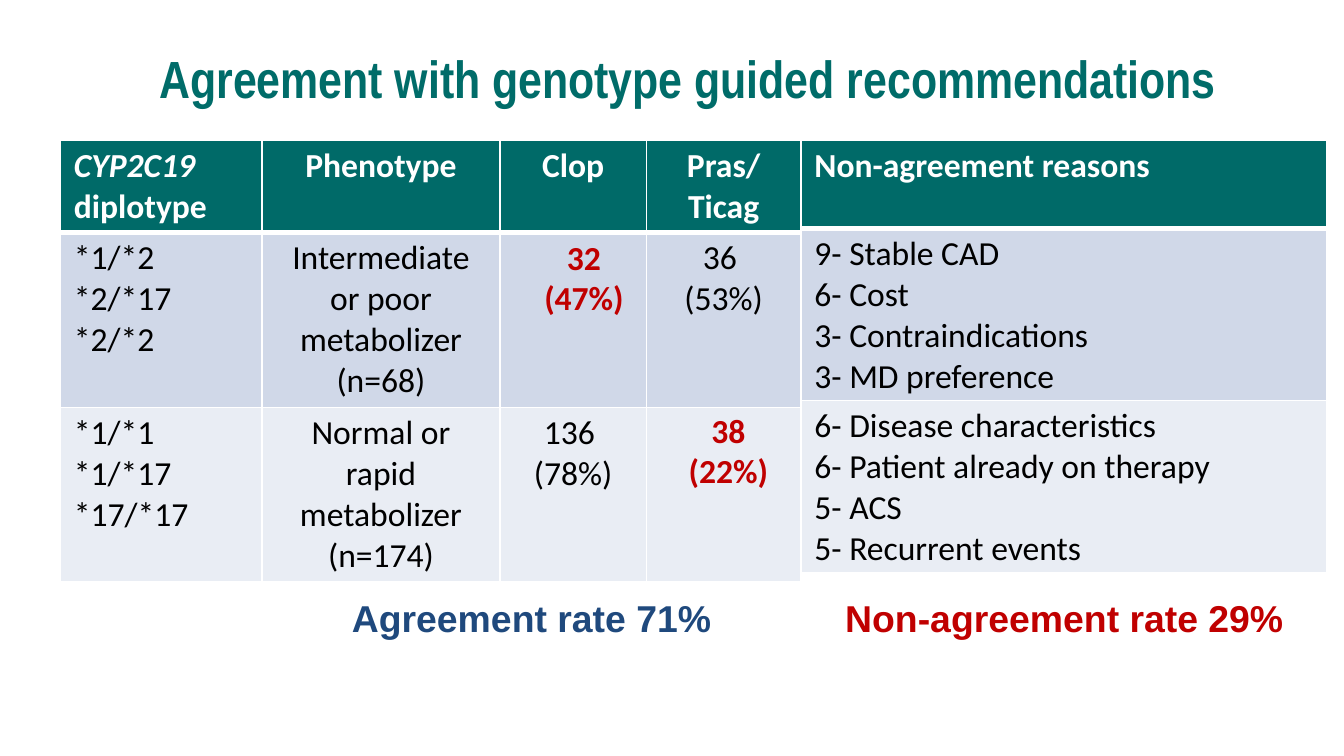
from dataclasses import dataclass

from lxml import etree
from pptx import Presentation
from pptx.dml.color import RGBColor
from pptx.enum import text
from pptx.oxml import ns
from pptx.util import Inches, Pt

COLORS = {
    "title": "006C69", "header": "006A68", "white": "FFFFFF", "black": "000000",
    "band_dark": "D0D8E8", "band_light": "E9EDF4", "blue": "1F497D", "red": "C00000",
}
BANDS = ("header", "band_dark", "band_light")
LEFT, CENTER = text.PP_ALIGN.LEFT, text.PP_ALIGN.CENTER


@dataclass
class Label:
    words: str
    left: float
    top: float
    width: float
    height: float
    color: str
    size: int = 20
    font: str = "Arial"
    align: text.PP_ALIGN = LEFT


@dataclass
class Grid:
    left: float
    columns: list[float]
    heights: list[float]
    aligns: list[text.PP_ALIGN]
    rows: list[list[str]]  # a line break in a cell starts a new paragraph


def add_run(paragraph, words: str, font: str, size: int, color: str,
            bold: bool = False, italic: bool = False) -> None:
    run = paragraph.add_run()
    run.text = words
    run.font.name, run.font.size = font, Pt(size)
    run.font.bold, run.font.italic = bold, italic
    run.font.color.rgb = RGBColor.from_string(COLORS[color])


def add_label(slide, label: Label) -> None:
    box = slide.shapes.add_textbox(Inches(label.left), Inches(label.top),
                                   Inches(label.width), Inches(label.height))
    box.text_frame.word_wrap = True
    box.text_frame.auto_size = text.MSO_AUTO_SIZE.SHAPE_TO_FIT_TEXT
    paragraph = box.text_frame.paragraphs[0]
    paragraph.alignment = label.align
    add_run(paragraph, label.words, label.font, label.size, label.color, bold=True)


def set_borders(cell, bottom_width: float) -> None:
    properties = cell._tc.get_or_add_tcPr()
    for side, width in (("L", 1), ("R", 1), ("T", 1), ("B", bottom_width)):
        line = etree.SubElement(properties, ns.qn(f"a:ln{side}"), w=str(Pt(width)))
        fill = etree.SubElement(line, ns.qn("a:solidFill"))
        etree.SubElement(fill, ns.qn("a:srgbClr"), val=COLORS["white"])


def fill_cell(cell, words: str, row: int, align: text.PP_ALIGN) -> None:
    is_header = row == 0
    set_borders(cell, 3 if is_header else 1)
    cell.fill.solid()
    cell.fill.fore_color.rgb = RGBColor.from_string(COLORS[BANDS[row]])
    cell.margin_left = cell.margin_right = Inches(0.1)
    cell.margin_top = cell.margin_bottom = Inches(0.04)
    for index, line in enumerate(words.split("\n") if words else []):
        frame = cell.text_frame
        paragraph = frame.paragraphs[0] if index == 0 else frame.add_paragraph()
        paragraph.alignment = align
        # The gene name is set in italics
        gene, found, rest = line.partition("CYP2C19 ")
        for part, italic in ((found, True), (rest if found else gene, False)):
            if part:
                add_run(paragraph, part, "Calibri", 18,
                        "white" if is_header else "black", is_header, italic)


def add_grid(slide, grid: Grid) -> None:
    table = slide.shapes.add_table(
        len(grid.rows), len(grid.columns), Inches(grid.left), Inches(1.04),
        Inches(sum(grid.columns)), Inches(sum(grid.heights))).table
    for column, width in zip(table.columns, grid.columns):
        column.width = Inches(width)
    for r, (height, row) in enumerate(zip(grid.heights, grid.rows)):
        table.rows[r].height = Inches(height)
        for c, (words, align) in enumerate(zip(row, grid.aligns)):
            fill_cell(table.cell(r, c), words, r, align)


GENOTYPES = Grid(
    0.45, [1.5, 1.77, 1.09, 1.15], [0.58, 1.08, 1.08], [LEFT, CENTER, CENTER, CENTER],
    [
        ["CYP2C19 diplotype", "Phenotype", "Clop", "Pras/ Ticag"],
        ["*1/*2\n*2/*17\n*2/*2", "Intermediate or poor metabolizer (n=68)",
         "", "36 \n(53%)"],
        ["*1/*1\n*1/*17\n*17/*17", "Normal or rapid metabolizer\n(n=174)",
         "136 \n(78%)", ""],
    ])
REASONS = Grid(
    5.96, [3.91], [0.66, 1.28, 1.28], [LEFT],
    [
        ["Non-agreement reasons"],
        ["9- Stable CAD\n6- Cost\n3- Contraindications\n3- MD preference"],
        ["6- Disease characteristics\n6- Patient already on therapy\n"
         "5- ACS\n5- Recurrent events"],
    ])
LABELS = [
    Label("Agreement rate 71%", 2.52, 4.38, 3.3, 0.44, "blue"),
    Label("32 (47%)", 3.95, 1.71, 0.79, 0.71, "red", 18, "Calibri", CENTER),
    Label("38 (22%)", 5.02, 3, 0.8, 0.71, "red", 18, "Calibri", CENTER),
    Label("Non-agreement rate 29%", 6.19, 4.38, 3.48, 0.44, "red"),
]


def main() -> None:
    # Widescreen slide, 16 by 9
    deck = Presentation()
    deck.slide_width = Inches(10)
    deck.slide_height = deck.slide_width * 9 // 16
    slide = deck.slides.add_slide(deck.slide_layouts[5])

    # Title
    title = slide.shapes.title
    title.left, title.top = Inches(0.5), Inches(0.15)
    title.width, title.height = Inches(9.23), Inches(0.86)
    title.text_frame.auto_size = text.MSO_AUTO_SIZE.NONE
    title.text_frame.vertical_anchor = text.MSO_ANCHOR.MIDDLE
    heading = title.text_frame.paragraphs[0]
    heading.alignment = CENTER
    add_run(heading, "Agreement with genotype guided recommendations",
            "Arial Narrow", 28, "title", bold=True)

    # Tables, with the highlighted counts and rates on top
    add_grid(slide, GENOTYPES)
    for label in LABELS:
        add_label(slide, label)
    add_grid(slide, REASONS)

    deck.save("out.pptx")


if __name__ == "__main__":
    main()
